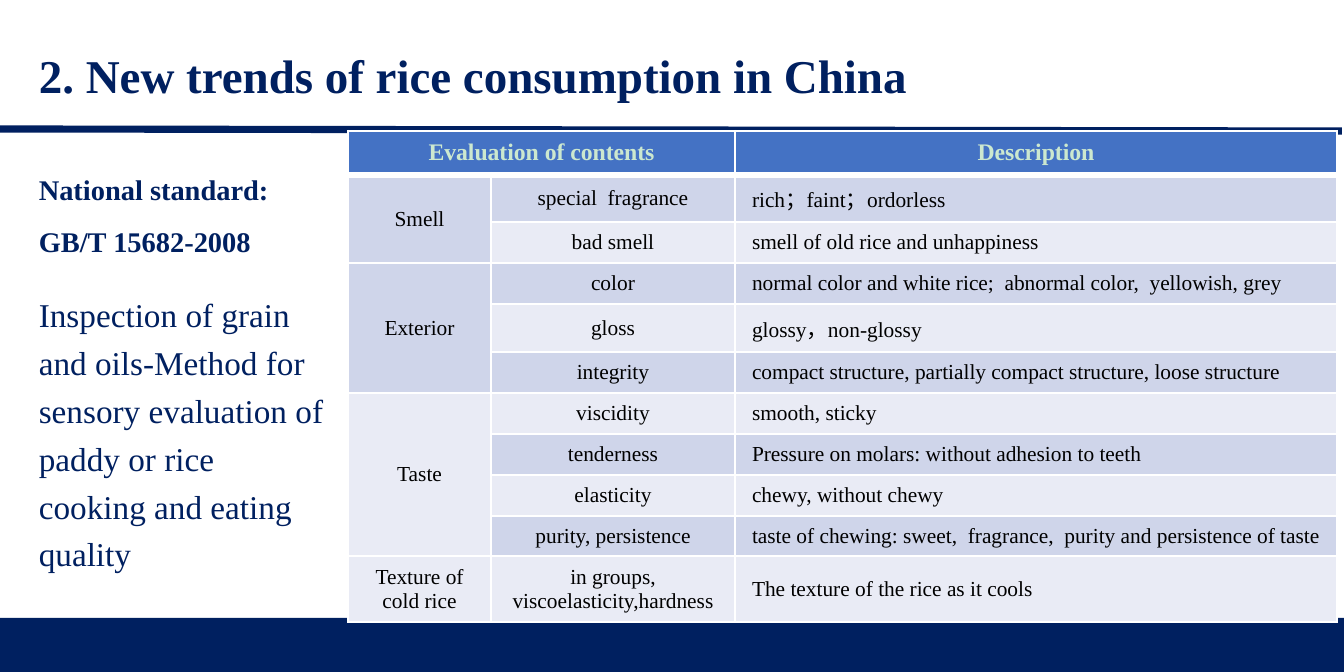
from dataclasses import dataclass

from lxml import etree
from pptx import Presentation, util as u
from pptx.dml.color import RGBColor
from pptx.enum import shapes, text
from pptx.oxml import ns

EMU_PER_PX = 5354
FONT = "Times New Roman"
NAVY = RGBColor(0x00, 0x20, 0x60)
HEADER_BLUE = RGBColor(0x44, 0x72, 0xC4)
PALE_GREEN = RGBColor(0xCC, 0xE8, 0xCF)
BAND_DARK = RGBColor(0xCF, 0xD5, 0xEA)
BAND_LIGHT = RGBColor(0xE9, 0xEB, 0xF5)
BLACK = RGBColor(0, 0, 0)
WHITE = RGBColor(0xFF, 0xFF, 0xFF)


@dataclass
class TextStyle:
    size: float
    color: RGBColor
    bold: bool = False


@dataclass
class Passage:
    words: str
    style: TextStyle
    line_spacing: float
    before: int = 0
    after: int = 0


@dataclass
class Criterion:
    aspect: str
    name: str
    description: str
    height: int = 41


@dataclass
class Aspect:
    name: str
    row_count: int


TITLE = TextStyle(19.8, NAVY, True)
STANDARD = TextStyle(12, NAVY, True)
METHOD = TextStyle(14, NAVY)
TABLE_HEADER = TextStyle(10, PALE_GREEN, True)
TABLE_BODY = TextStyle(9, BLACK)

FOOTER_BARS = [(625, 51), (618, 7)]
HEADER_HEIGHT = 44
COLUMN_WIDTHS = [143, 244, 602]
ASPECTS = [Aspect("Smell", 2), Aspect("Exterior", 3), Aspect("Taste", 4),
           Aspect("Texture of cold rice", 1)]
CRITERIA = [
    Criterion("Smell", "special  fragrance", "rich；faint；ordorless", 47),
    Criterion("Smell", "bad smell", "smell of old rice and unhappiness"),
    Criterion("Exterior", "color",
              "normal color and white rice;  abnormal color,  yellowish, grey"),
    Criterion("Exterior", "gloss", "glossy，non-glossy", 48),
    Criterion("Exterior", "integrity",
              "compact structure, partially compact structure, loose structure"),
    Criterion("Taste", "viscidity", "smooth, sticky"),
    Criterion("Taste", "tenderness", "Pressure on molars: without adhesion to teeth"),
    Criterion("Taste", "elasticity", "chewy, without chewy"),
    Criterion("Taste", "purity, persistence",
              "taste of chewing: sweet,  fragrance,  purity and persistence of taste"),
    Criterion("Texture of cold rice", "in groups,\nviscoelasticity,hardness",
              "The texture of the rice as it cools", 65),
]
PASSAGES = [
    Passage("National standard:", STANDARD, 1.2, after=6),
    Passage("GB/T 15682-2008", STANDARD, 1.1, after=6),
    Passage("Inspection of grain and oils-Method for sensory evaluation of "
            "paddy or rice cooking and eating quality", METHOD, 1.2, before=6, after=6),
]


def px(length: int) -> u.Emu:
    return u.Emu(length * EMU_PER_PX)


def style_paragraph(paragraph, style: TextStyle) -> None:
    for run in paragraph.runs:
        run.font.name = FONT
        run.font.size = u.Pt(style.size)
        run.font.bold = style.bold
        run.font.color.rgb = style.color


def add_passages(slide, left: int, top: int, width: int, height: int,
                 passages: list[Passage], anchor) -> None:
    frame = slide.shapes.add_textbox(px(left), px(top), px(width), px(height)).text_frame
    frame.word_wrap = True
    frame.vertical_anchor = anchor
    frame.text = "\n".join(passage.words for passage in passages)
    for paragraph, passage in zip(frame.paragraphs, passages):
        paragraph.line_spacing = passage.line_spacing
        paragraph.space_before = u.Pt(passage.before)
        paragraph.space_after = u.Pt(passage.after)
        style_paragraph(paragraph, passage.style)


def add_footer_bar(slide, width: int, top: int, height: int) -> None:
    bar = slide.shapes.add_shape(shapes.MSO_SHAPE.RECTANGLE, 0, px(top), px(width), px(height))
    bar.shadow.inherit = False
    bar.fill.solid()
    bar.fill.fore_color.rgb = NAVY
    bar.line.fill.background()


def add_title_rule(slide) -> None:
    rule = slide.shapes.add_connector(
        shapes.MSO_CONNECTOR.STRAIGHT, 0, px(129), px(1342), px(131))
    rule.line.color.rgb = NAVY
    rule.line.width = u.Pt(3)
    etree.SubElement(rule._element.spPr, ns.qn("a:effectLst"))


def set_borders(cell, bottom_width: int) -> None:
    properties = cell._tc.get_or_add_tcPr()
    for side, width in (("L", 1), ("R", 1), ("T", 1), ("B", bottom_width)):
        border = etree.SubElement(properties, ns.qn(f"a:ln{side}"), w=str(u.Pt(width)))
        fill = etree.SubElement(border, ns.qn("a:solidFill"))
        etree.SubElement(fill, ns.qn("a:srgbClr"), val=str(WHITE))


def fill_cell(cell, words: str, style: TextStyle, background: RGBColor,
              align=text.PP_ALIGN.CENTER, bottom_width: int = 1) -> None:
    set_borders(cell, bottom_width)
    cell.fill.solid()
    cell.fill.fore_color.rgb = background
    cell.margin_top = cell.margin_bottom = px(7)
    cell.vertical_anchor = text.MSO_ANCHOR.MIDDLE
    cell.text_frame.text = words
    for paragraph in cell.text_frame.paragraphs:
        paragraph.alignment = align
        style_paragraph(paragraph, style)


def add_evaluation_table(slide) -> None:
    heights = [HEADER_HEIGHT] + [criterion.height for criterion in CRITERIA]
    table = slide.shapes.add_table(
        len(heights), len(COLUMN_WIDTHS), px(348), px(131),
        px(sum(COLUMN_WIDTHS)), px(sum(heights))).table
    table.horz_banding = False
    for column, width in zip(table.columns, COLUMN_WIDTHS):
        column.width = px(width)
    for row, height in zip(table.rows, heights):
        row.height = px(height)

    for column, heading in enumerate(("Evaluation of contents", "", "Description")):
        fill_cell(table.cell(0, column), heading, TABLE_HEADER, HEADER_BLUE, bottom_width=3)
    table.cell(0, 0).merge(table.cell(0, 1))

    starts = {}
    for row, criterion in enumerate(CRITERIA, 1):
        band = BAND_DARK if row % 2 else BAND_LIGHT
        label = "" if criterion.aspect in starts else criterion.aspect
        starts.setdefault(criterion.aspect, row)
        fill_cell(table.cell(row, 0), label, TABLE_BODY, band)
        fill_cell(table.cell(row, 1), criterion.name, TABLE_BODY, band)
        fill_cell(table.cell(row, 2), criterion.description, TABLE_BODY, band,
                  text.PP_ALIGN.LEFT)
    for aspect in ASPECTS:
        if aspect.row_count > 1:
            first = starts[aspect.name]
            table.cell(first, 0).merge(table.cell(first + aspect.row_count - 1, 0))


def main() -> None:
    deck = Presentation()
    deck.slide_width, deck.slide_height = px(1344), px(672)
    slide = deck.slides.add_slide(deck.slide_layouts[6])
    slide.background.fill.solid()
    slide.background.fill.fore_color.rgb = WHITE
    for top, height in FOOTER_BARS:
        add_footer_bar(slide, 1344, top, height)
    add_title_rule(slide)
    add_passages(slide, 22, 26, 980, 104,
                 [Passage("2. New trends of rice consumption in China", TITLE, 0.9)],
                 text.MSO_ANCHOR.MIDDLE)
    add_evaluation_table(slide)
    add_passages(slide, 22, 157, 324, 418, PASSAGES, text.MSO_ANCHOR.TOP)
    deck.save("out.pptx")


if __name__ == "__main__":
    main()
